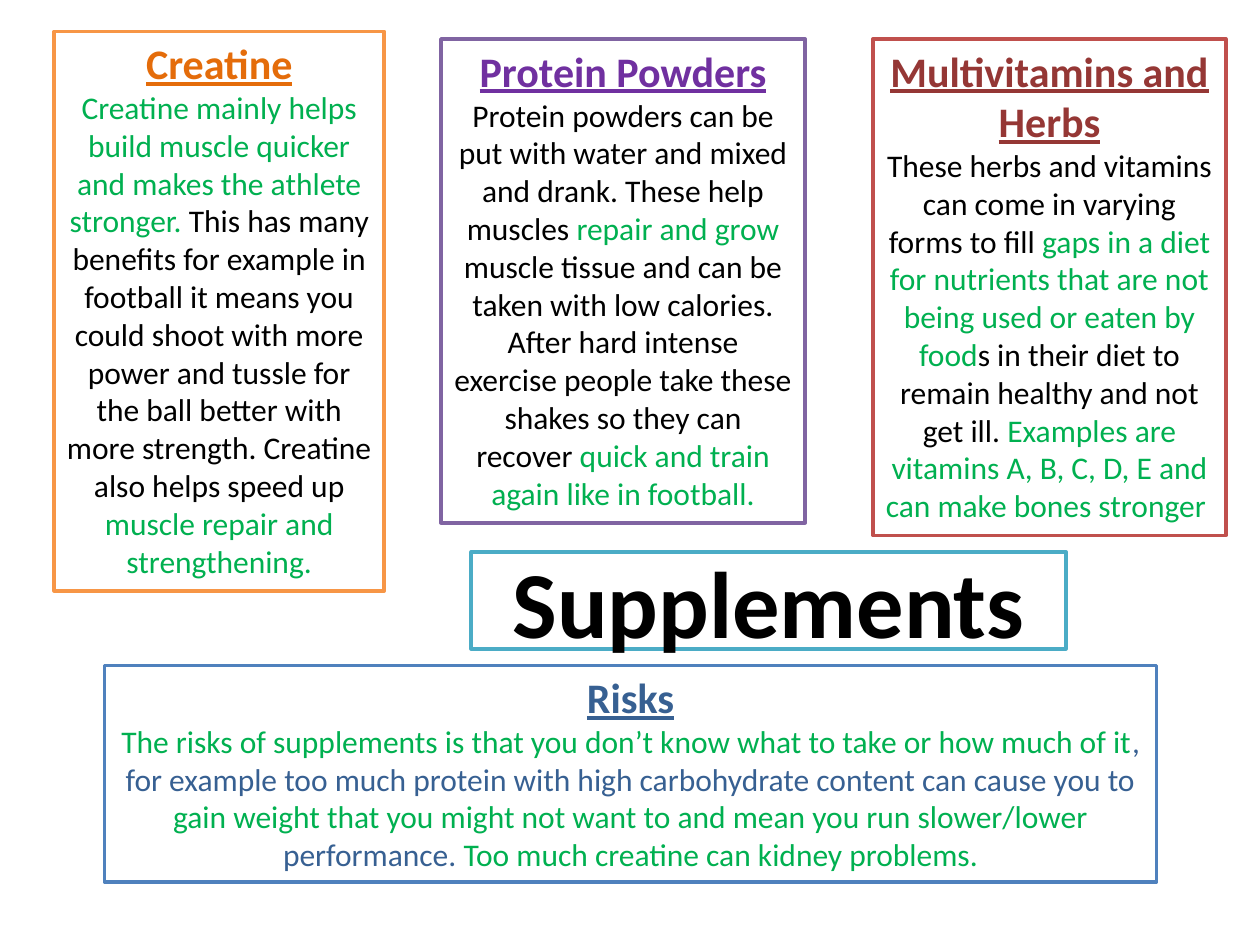
from pptx import Presentation
from pptx.dml.color import RGBColor
from pptx.enum.shapes import MSO_SHAPE
from pptx.enum.text import MSO_ANCHOR, MSO_AUTO_SIZE, PP_ALIGN
from pptx.util import Inches, Pt

RECT = MSO_SHAPE.RECTANGLE
CENTER = PP_ALIGN.CENTER
TOP, MIDDLE = MSO_ANCHOR.TOP, MSO_ANCHOR.MIDDLE
GROW, FIXED = MSO_AUTO_SIZE.SHAPE_TO_FIT_TEXT, MSO_AUTO_SIZE.NONE

FONT = "Calibri"
WHITE, BLACK, GREEN, NAVY = "FFFFFF", "000000", "00B050", "376092"

PANELS = [
    ((0.43, 0.25, 2.62, 4.44), "F79646", "Creatine", "E46C0A", [
        ("Creatine mainly helps build muscle quicker and makes the athlete stronger.", GREEN),
        (" This has many benefits for example in football it means you could shoot "
         "with more power and tussle for the ball better with more strength. "
         "Creatine also helps speed up ", BLACK),
        ("muscle repair and strengthening.", GREEN),
    ]),
    ((3.5, 0.31, 2.89, 3.84), "8064A2", "Protein Powders", "7030A0", [
        ("Protein powders can be put with water and mixed and drank. "
         "These help muscles ", BLACK),
        ("repair and grow ", GREEN),
        ("muscle tissue and can be taken with low calories. After hard intense "
         "exercise people take these shakes so they can recover ", BLACK),
        ("quick and train again like in football.", GREEN),
    ]),
    ((6.93, 0.31, 2.8, 3.94), "C0504D", "Multivitamins and Herbs", "953735", [
        ("These herbs and vitamins can come in varying forms to fill ", BLACK),
        ("gaps in a diet for nutrients that are not being used or eaten by food", GREEN),
        ("s in their diet to remain healthy and not get ill. ", BLACK),
        ("Examples are vitamins A, B, C, D, E and can make bones stronger ", GREEN),
    ]),
    ((0.83, 5.28, 8.35, 1.72), "4F81BD", "Risks", NAVY, [
        ("The risks of supplements is that you don’t know what to take "
         "or how much of it", GREEN),
        (", for example too much protein with high carbohydrate content "
         "can cause you to ", NAVY),
        ("gain weight that you might not want to and mean you run slower/lower ", GREEN),
        ("performance. ", NAVY),
        ("Too much creatine can kidney problems.", GREEN),
    ]),
]


def rgb(color):
    return RGBColor.from_string(color)


def add_frame(s, box, line, anchor, auto_size):
    sp = s.shapes.add_shape(RECT, *map(Inches, box))
    sp.shadow.inherit = False
    sp.fill.solid()
    sp.fill.fore_color.rgb = rgb(WHITE)
    sp.line.color.rgb = rgb(line)
    sp.line.width = Pt(2)
    tf = sp.text_frame
    tf.word_wrap = True
    tf.auto_size = auto_size
    tf.vertical_anchor = anchor
    tf.paragraphs[0].alignment = CENTER
    return tf


def add_run(p, text, size, color, bold=False, underline=False):
    r = p.add_run()
    r.text = text
    r.font.name = FONT
    r.font.size = Pt(size)
    r.font.bold = bold
    r.font.underline = underline
    r.font.color.rgb = rgb(color)


def add_panel(s, box, line, heading, heading_color, body):
    tf = add_frame(s, box, line, TOP, GROW)
    add_run(tf.paragraphs[0], heading, 24, heading_color, bold=True, underline=True)
    p = tf.add_paragraph()
    p.alignment = CENTER
    for text, color in body:
        add_run(p, text, 18, color)


def add_title(s, box):
    tf = add_frame(s, box, "4BACC6", MIDDLE, FIXED)
    add_run(tf.paragraphs[0], "Supplements", 54, BLACK, bold=True)


def main():
    prs = Presentation()
    prs.slide_width, prs.slide_height = Inches(10), Inches(7.5)
    s = prs.slides.add_slide(prs.slide_layouts[6])
    for panel in PANELS:
        add_panel(s, *panel)
    add_title(s, (3.74, 4.38, 4.72, 0.77))
    prs.save("out.pptx")


if __name__ == "__main__":
    main()
